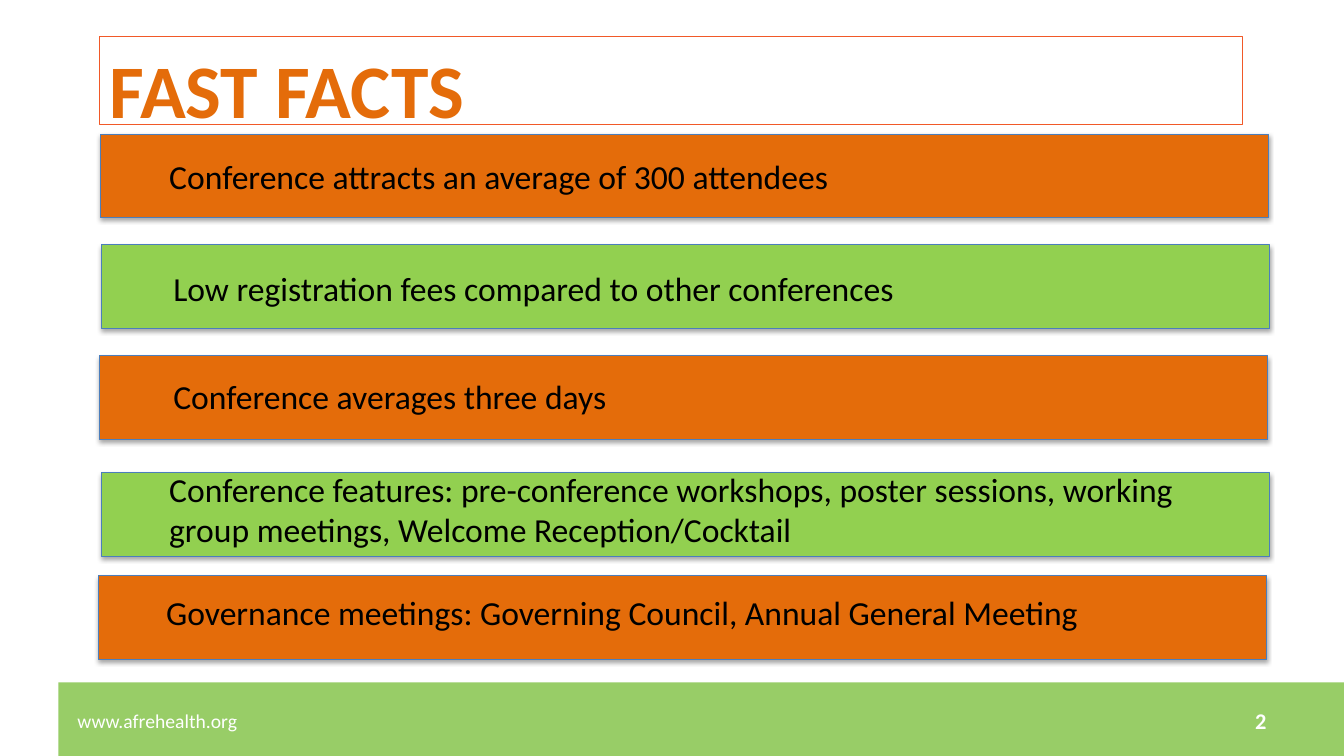
from lxml import etree
from pptx import Presentation
from pptx.dml.color import RGBColor
from pptx.enum.shapes import MSO_SHAPE
from pptx.enum.text import MSO_ANCHOR, PP_ALIGN
from pptx.oxml.ns import qn
from pptx.util import Inches, Pt

RECT = MSO_SHAPE.RECTANGLE
TOP, MIDDLE = MSO_ANCHOR.TOP, MSO_ANCHOR.MIDDLE
LEFT, RIGHT = PP_ALIGN.LEFT, PP_ALIGN.RIGHT
FONT = "Calibri"
COLORS = {
    "orange": "E46C0A",
    "green": "92D050",
    "footer": "98CD67",
    "frame": "F15928",
    "edge": "4B7EBC",
    "white": "FFFFFF",
    "black": "000000",
}
BAR_SIZE = (11.58, 0.83)
# Bar left and top, then text box, then wording
FACTS = [
    ((1, 1.33), (1.58, 1.5, 8.58, 0.5),
     "Conference attracts an average of 300 attendees"),
    ((1.01, 2.43), (1.62, 2.61, 8.58, 0.5),
     "Low registration fees compared to other conferences"),
    ((0.99, 3.53), (1.62, 3.68, 9.01, 0.5),
     "Conference averages three days"),
    ((1.01, 4.69), (1.58, 4.6, 10.8, 1.21),
     "Conference features: pre-conference workshops, poster sessions, "
     "working group meetings, Welcome Reception/Cocktail"),
    ((0.98, 5.71), (1.55, 5.82, 10.34, 0.91),
     "Governance meetings: Governing Council, Annual General Meeting"),
]


def color(name):
    return RGBColor.from_string(COLORS[name])


def add_rect(slide, box, fill=None, line=None):
    rect = slide.shapes.add_shape(RECT, *map(Inches, box))
    rect.shadow.inherit = False
    if fill:
        rect.fill.solid()
        rect.fill.fore_color.rgb = color(fill)
    else:
        rect.fill.background()
    if line:
        rect.line.color.rgb = color(line)
        rect.line.width = Pt(0.75)
    else:
        rect.line.fill.background()
    return rect


def add_shadow(shape):
    """Give the shape a soft shadow that falls straight down."""
    effects = shape._element.spPr.find(qn("a:effectLst"))
    outer = etree.SubElement(
        effects, qn("a:outerShdw"), blurRad=str(Pt(3.1)), dist=str(Pt(1.8)),
        dir="5400000", rotWithShape="0")
    black = etree.SubElement(outer, qn("a:srgbClr"), val=COLORS["black"])
    etree.SubElement(black, qn("a:alpha"), val="35000")


def set_text(shape, text, size, tint, bold=False, align=LEFT, anchor=TOP):
    frame = shape.text_frame
    frame.word_wrap = True
    frame.vertical_anchor = anchor
    frame.text = text
    line = frame.paragraphs[0]
    line.alignment = align
    font = line.runs[0].font
    font.name = FONT
    font.size = Pt(size)
    font.bold = bold
    font.color.rgb = color(tint)


def add_text(slide, box, text, size, tint, **style):
    label = slide.shapes.add_textbox(*map(Inches, box))
    set_text(label, text, size, tint, **style)


def add_title(slide, text):
    title = add_rect(slide, (0.99, 0.36, 11.33, 0.88), line="frame")
    set_text(title, text, 54, "orange", bold=True)
    title.text_frame.margin_top = Inches(0.07)


def add_footer(slide, site, page):
    add_rect(slide, (0.58, 6.77, 12.75, 0.73), fill="footer")
    add_text(slide, (0.67, 6.95, 1.83, 0.4), site, 14, "white", anchor=MIDDLE)
    add_text(slide, (11.83, 6.95, 0.83, 0.4), page, 16, "white",
             bold=True, align=RIGHT, anchor=MIDDLE)


def add_fact(slide, spot, box, text, fill):
    bar = add_rect(slide, spot + BAR_SIZE, fill, "edge")
    add_shadow(bar)
    add_text(slide, box, text, 24, "black")


def main():
    deck = Presentation()
    deck.slide_width, deck.slide_height = Inches(13.33), Inches(7.5)
    slide = deck.slides.add_slide(deck.slide_layouts[6])
    add_footer(slide, "www.afrehealth.org", "2")
    add_title(slide, "FAST FACTS")
    for row, fact in enumerate(FACTS):
        add_fact(slide, *fact, fill="green" if row % 2 else "orange")
    deck.save("out.pptx")


if __name__ == "__main__":
    main()
